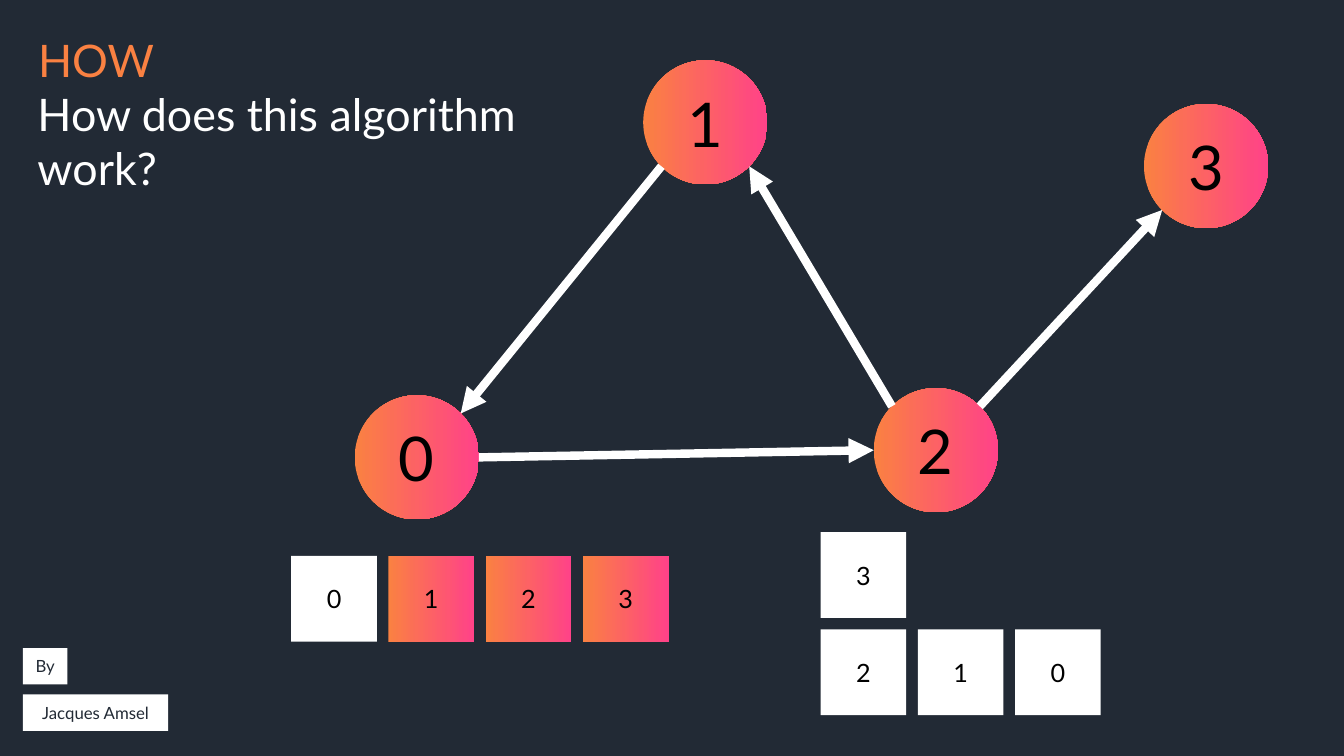
from math import cos, radians, sin

from lxml import etree
from pptx import Presentation
from pptx.dml.color import RGBColor
from pptx.enum.shapes import MSO_CONNECTOR, MSO_SHAPE
from pptx.enum.text import MSO_ANCHOR, MSO_AUTO_SIZE, PP_ALIGN
from pptx.oxml.ns import qn
from pptx.util import Cm, Pt

RECTANGLE, OVAL = MSO_SHAPE.RECTANGLE, MSO_SHAPE.OVAL
STRAIGHT = MSO_CONNECTOR.STRAIGHT
TOP, MIDDLE = MSO_ANCHOR.TOP, MSO_ANCHOR.MIDDLE
LEFT, CENTER = PP_ALIGN.LEFT, PP_ALIGN.CENTER
NO_AUTOFIT = MSO_AUTO_SIZE.NONE

FONT = "Lato"
DARK, WHITE, BLACK, ORANGE = "222A35", "FFFFFF", "000000", "FA8142"
GLOW = (ORANGE, "FF4288")

KICKER = ("HOW", (0.71, 0.69, 25.2, 1.63), ORANGE)
QUESTION = ("How does this algorithm work?", (0.69, 2.06, 14.2, 3), WHITE)

CREDITS = [
    ("By", (0.58, 16.33, 1.12, 0.92)),
    ("Jacques Amsel", (0.58, 17.5, 3.66, 0.92)),
]

NODE_SIZE = 3.13
NODES = {
    "0": (8.94, 9.96),
    "1": (16.21, 1.52),
    "2": (22.02, 9.78),
    "3": (28.83, 2.62),
}
# EDGES


EDGES = [
    ("1", 135, "0", 315),
    ("2", 225, "1", 45),
    ("0", 0, "2", 180),
    ("2", 315, "3", 135),
]

TILE_SIZE, TILE_STEP = 2.16, 2.45
TILE_ROWS = [
    (7.34, 14.01, [("0", WHITE), ("1", GLOW), ("2", GLOW), ("3", GLOW)]),
    (20.68, 13.41, [("3", WHITE)]),
    (20.68, 15.86, [("2", WHITE), ("1", WHITE), ("0", WHITE)]),
]


def colour(value):
    return RGBColor.from_string(value)


def write(shape, text, size, tint, align, anchor):
    frame = shape.text_frame
    frame.word_wrap = True
    frame.auto_size = NO_AUTOFIT
    frame.vertical_anchor = anchor
    para = frame.paragraphs[0]
    para.alignment = align
    span = para.add_run()
    span.text = text
    span.font.name = FONT
    span.font.size = Pt(size)
    span.font.color.rgb = colour(tint)


def add_block(page, kind, bounds, paint, text, size, tint=BLACK):
    shape = page.shapes.add_shape(kind, *map(Cm, bounds))
    shape.shadow.inherit = False
    shape.line.fill.background()
    if paint == GLOW:
        shape.fill.gradient()
        shape.fill.gradient_angle = 0
        for stop, shade in zip(shape.fill.gradient_stops, GLOW):
            stop.color.rgb = colour(shade)
    else:
        shape.fill.solid()
        shape.fill.fore_color.rgb = colour(paint)
    write(shape, text, size, tint, CENTER, MIDDLE)


def rim_point(node, angle):
    radius = NODE_SIZE / 2
    left, top = NODES[node]
    turn = radians(angle)
    return Cm(left + radius + radius * cos(turn)), Cm(top + radius + radius * sin(turn))


def add_edge(page, source, leaving, target, arriving):
    edge = page.shapes.add_connector(
        STRAIGHT, *rim_point(source, leaving), *rim_point(target, arriving)
    )
    edge.line.color.rgb = colour(WHITE)
    edge.line.width = Pt(6)
    etree.SubElement(edge.line._get_or_add_ln(), qn("a:tailEnd"), type="triangle")
    etree.SubElement(edge._element.spPr, qn("a:effectLst"))


def main():
    deck = Presentation()
    deck.slide_width, deck.slide_height = Cm(33.87), Cm(19.05)
    page = deck.slides.add_slide(deck.slide_layouts[5])
    page.background.fill.solid()
    page.background.fill.fore_color.rgb = colour(DARK)

    text, bounds, tint = QUESTION
    title = page.shapes.title
    title.left, title.top, title.width, title.height = map(Cm, bounds)
    write(title, text, 32, tint, LEFT, TOP)

    text, bounds, tint = KICKER
    write(page.shapes.add_textbox(*map(Cm, bounds)), text, 32, tint, LEFT, TOP)

    for text, bounds in CREDITS:
        add_block(page, RECTANGLE, bounds, WHITE, text, 12, DARK)

    for text, corner in NODES.items():
        add_block(page, OVAL, (*corner, NODE_SIZE, NODE_SIZE), GLOW, text, 44)

    for edge in EDGES:
        add_edge(page, *edge)

    for left, top, tiles in TILE_ROWS:
        for column, (text, paint) in enumerate(tiles):
            bounds = (left + column * TILE_STEP, top, TILE_SIZE, TILE_SIZE)
            add_block(page, RECTANGLE, bounds, paint, text, 18)

    deck.save("out.pptx")


if __name__ == "__main__":
    main()
